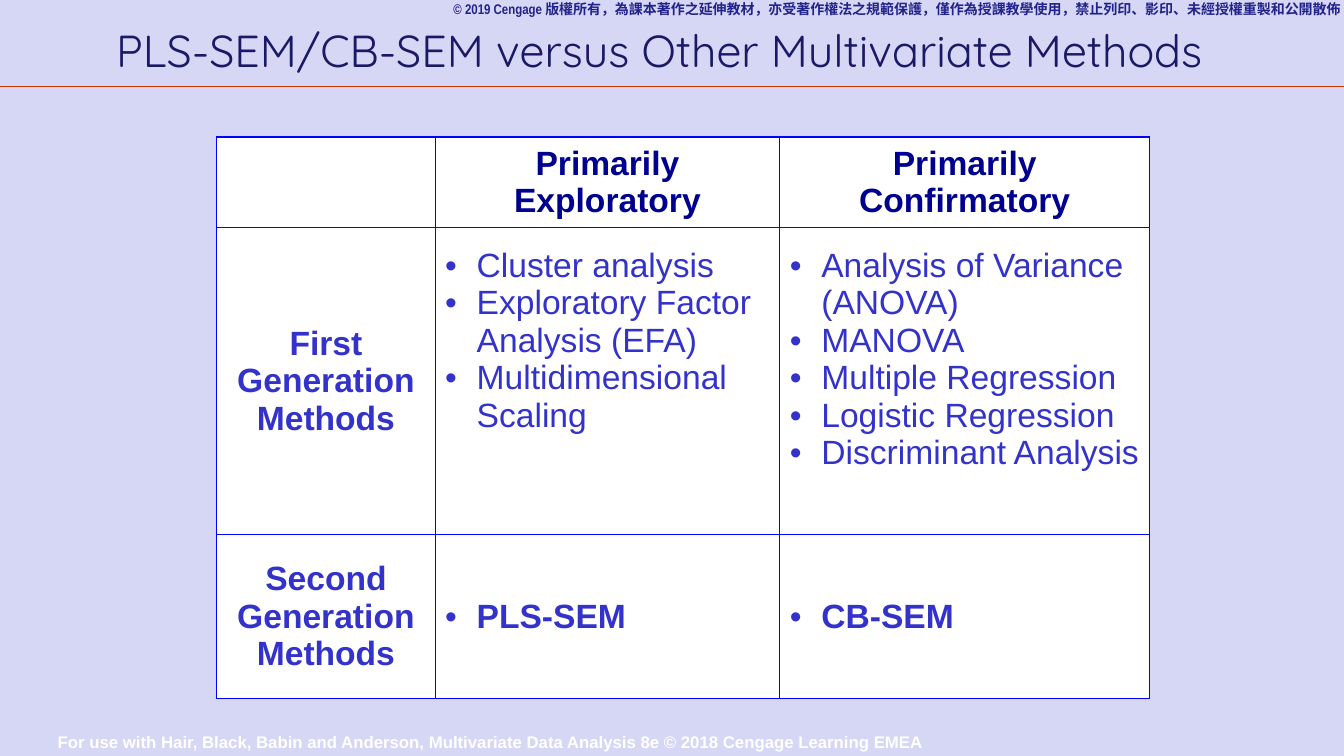
from lxml.etree import SubElement
from pptx import Presentation
from pptx.dml.color import RGBColor
from pptx.enum.shapes import MSO_CONNECTOR
from pptx.enum.text import MSO_ANCHOR, PP_ALIGN
from pptx.oxml.ns import qn
from pptx.util import Pt

COLORS = {"bg": "D6D6F5", "rule": "CC3300", "notice": "22228B", "title": "191966",
          "head": "000090", "body": "3333CC", "border": "0000FF", "white": "FFFFFF"}


def add_run(p, text, size, color, bold=False, font="Arial"):
    r = p.add_run()
    r.text = text
    r.font.size = Pt(size)
    r.font.name = font
    r.font.bold = bold
    r.font.color.rgb = RGBColor.from_string(COLORS[color])


def add_borders(cell):
    tcPr = cell._tc.get_or_add_tcPr()
    for side in ("lnL", "lnR", "lnT", "lnB"):
        ln = SubElement(tcPr, qn(f"a:{side}"), w=str(Pt(1)))
        SubElement(SubElement(ln, qn("a:solidFill")), qn("a:srgbClr"), val=COLORS["border"])


prs = Presentation()
prs.slide_width, prs.slide_height = Pt(960), Pt(540)
s = prs.slides.add_slide(prs.slide_layouts[5])
s.background.fill.solid()
s.background.fill.fore_color.rgb = RGBColor.from_string(COLORS["bg"])

# Rule under the title
rule = s.shapes.add_connector(MSO_CONNECTOR.STRAIGHT, Pt(0), Pt(61.9), Pt(960), Pt(61.9))
rule.line.color.rgb = RGBColor.from_string(COLORS["rule"])
rule.line.width = Pt(0.75)
SubElement(rule._element.spPr, qn("a:effectLst"))

# Title
title = s.shapes.title
title.left, title.top, title.width, title.height = Pt(20.9), Pt(10.1), Pt(900.7), Pt(50.4)
tf = title.text_frame
tf.word_wrap = True
tf.vertical_anchor = MSO_ANCHOR.MIDDLE
p = tf.paragraphs[0]
p.alignment = PP_ALIGN.CENTER
add_run(p, "PLS-SEM/CB-SEM versus Other Multivariate Methods", 32, "title", font="Quicksand")

# Copyright notice and footer
notices = [
    ("© 2019 Cengage版權所有，為課本著作之延伸教材，亦受著作權法之規範保護，"
     "僅作為授課教學使用，禁止列印、影印、未經授權重製和公開散佈",
     (316.8, -2.9, 720.7, 19.4), 10, "notice", "Arial Narrow", PP_ALIGN.LEFT, MSO_ANCHOR.TOP),
    ("For use with Hair, Black, Babin and Anderson, Multivariate Data Analysis 8e "
     "© 2018 Cengage Learning EMEA",
     (-28.1, 519.1, 757.4, 20.9), 12, "white", "Arial", PP_ALIGN.CENTER, MSO_ANCHOR.MIDDLE),
]
for text, box, size, color, font, align, anchor in notices:
    tf = s.shapes.add_textbox(*[Pt(v) for v in box]).text_frame
    tf.word_wrap = True
    tf.vertical_anchor = anchor
    p = tf.paragraphs[0]
    p.alignment = align
    add_run(p, text, size, color, True, font)

# Methods table
rows = [
    [[], ["Primarily Exploratory"], ["Primarily Confirmatory"]],
    [["First Generation Methods"],
     ["Cluster analysis", "Exploratory Factor Analysis (EFA)", "Multidimensional Scaling"],
     ["Analysis of Variance (ANOVA)", "MANOVA", "Multiple Regression",
      "Logistic Regression", "Discriminant Analysis"]],
    [["Second Generation Methods"], ["PLS-SEM"], ["CB-SEM"]],
]
widths, heights = [156, 246.2, 264.2], [64.8, 218.9, 117.4]
table = s.shapes.add_table(3, 3, Pt(154.8), Pt(97.9), Pt(sum(widths)), Pt(sum(heights))).table
table.first_row = table.horz_banding = False
for col, width in zip(table.columns, widths):
    col.width = Pt(width)
for row, height in zip(table.rows, heights):
    row.height = Pt(height)

for i, row in enumerate(rows):
    for j, items in enumerate(row):
        cell = table.cell(i, j)
        add_borders(cell)
        cell.fill.solid()
        cell.fill.fore_color.rgb = RGBColor.from_string(COLORS["white"])
        bulleted = i > 0 and j > 0
        is_list = i == 1 and j > 0
        cell.vertical_anchor = MSO_ANCHOR.TOP if is_list else MSO_ANCHOR.MIDDLE
        cell.margin_left = cell.margin_right = Pt(7.2)
        cell.margin_top = Pt(13.7 if is_list else 3.6)
        cell.margin_bottom = Pt(3.6)
        tf = cell.text_frame
        for k, text in enumerate(items):
            p = tf.add_paragraph() if k else tf.paragraphs[0]
            if bulleted:
                pPr = p._p.get_or_add_pPr()
                pPr.set("marL", str(Pt(22.5)))
                pPr.set("indent", str(Pt(-22.5)))
                SubElement(pPr, qn("a:buFont"), typeface="Arial")
                SubElement(pPr, qn("a:buChar"), char="•")
            else:
                p.alignment = PP_ALIGN.CENTER
            add_run(p, text, 24, "body" if i else "head", not is_list)

prs.save("out.pptx")
